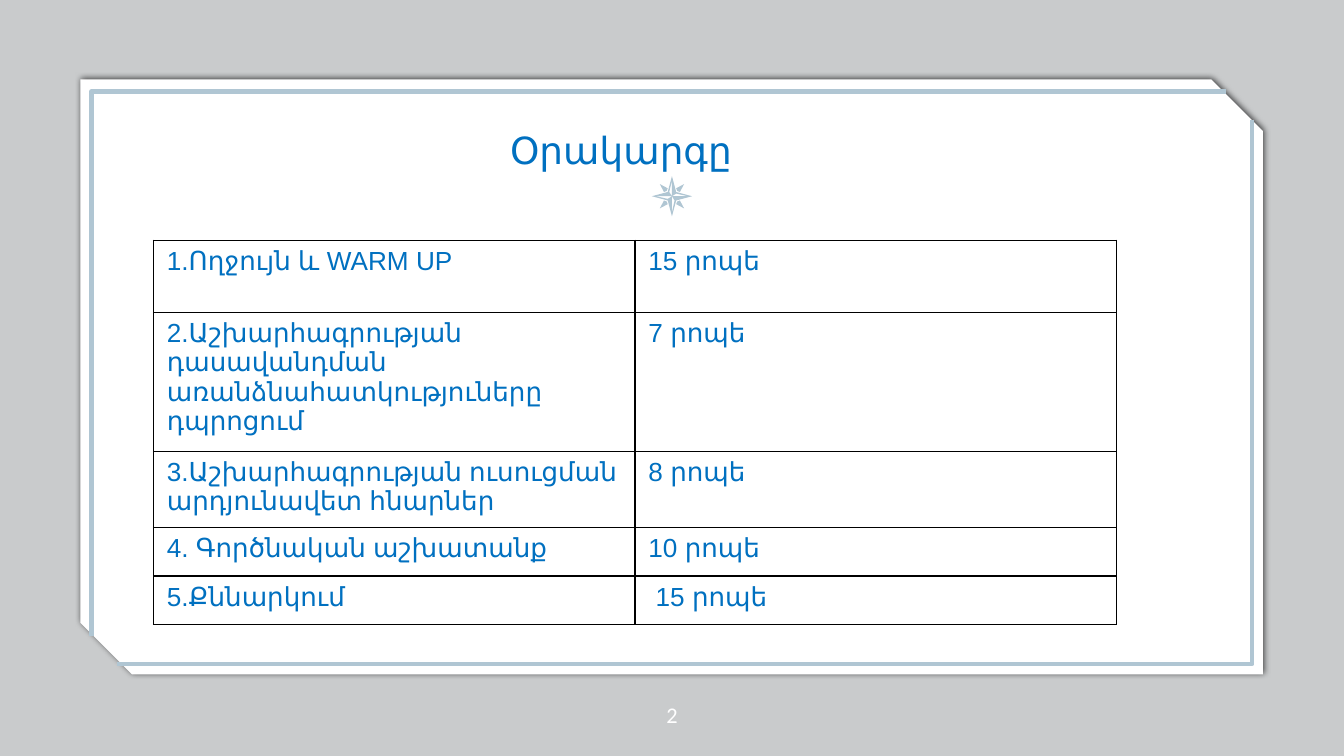
from lxml import etree
from pptx import Presentation
from pptx import util as u
from pptx.dml.color import RGBColor
from pptx.enum import shapes, text
from pptx.oxml import parse_xml
from pptx.oxml.ns import nsdecls, qn

AGENDA = [
    ("1.Ողջույն և WARM UP", "15 րոպե", 1.36),
    ("2.Աշխարհագրության դասավանդման առանձնահատկություները դպրոցում", "7 րոպե", 2.48),
    ("3.Աշխարհագրության ուսուցման արդյունավետ հնարներ", "8 րոպե", 1.36),
    ("4. Գործնական աշխատանք", "10 րոպե", 0.92),
    ("5.Քննարկում", " 15 րոպե", 0.92),
]


def color(value):
    return RGBColor.from_string(value)


def quarter_turns(points):
    for _ in range(4):
        yield points
        points = [(-y, x) for x, y in points]


class Deck:
    ACCENT = "B0C6D3"
    INK = "0070C0"
    WHITE = "FFFFFF"
    BLACK = "000000"

    def __init__(self, width, height):
        self.prs = Presentation()
        self.prs.slide_width, self.prs.slide_height = u.Cm(width), u.Cm(height)
        self.s = self.prs.slides.add_slide(self.prs.slide_layouts[6])

    def shape(self, kind, box, fill):
        sp = self.s.shapes.add_shape(kind, *map(u.Cm, box))
        sp.shadow.inherit = False
        sp.fill.solid()
        sp.fill.fore_color.rgb = color(fill)
        sp.line.fill.background()
        return sp

    def transparency(self, sp, opacity):
        clr = sp._element.spPr.find(qn("a:solidFill"))[0]
        etree.SubElement(clr, qn("a:alpha"), val=str(opacity * 1000))

    def drop_shadow(self, sp, blur, distance, opacity):
        effects = sp._element.spPr.find(qn("a:effectLst"))
        effects.append(parse_xml(
            f'<a:outerShdw {nsdecls("a")} blurRad="{u.Pt(blur)}" dist="{u.Pt(distance)}" '
            f'dir="0" algn="ctr" rotWithShape="0"><a:srgbClr val="{self.BLACK}">'
            f'<a:alpha val="{opacity * 1000}"/></a:srgbClr></a:outerShdw>'))

    def outline(self, contours, origin=(0, 0), closed=True):
        contours = [[(u.Cm(origin[0] + x), u.Cm(origin[1] + y)) for x, y in c]
                    for c in contours]
        builder = self.s.shapes.build_freeform(*contours[0][0])
        for i, points in enumerate(contours):
            if i:
                builder.move_to(*points[0])
            builder.add_line_segments(points[1:], close=closed)
        sp = builder.convert_to_shape()
        sp.shadow.inherit = False
        if closed:
            sp.fill.solid()
            sp.fill.fore_color.rgb = color(self.ACCENT)
            sp.line.fill.background()
        else:
            sp.fill.background()
            sp.line.color.rgb = color(self.ACCENT)
            sp.line.width = u.Pt(2.25)

    def compass(self, x, y):
        for kite in quarter_turns([(-.23, -.23), (-.15, -.08), (-.1, -.1), (-.08, -.15)]):
            self.outline([kite], (x, y))
        rays = quarter_turns([(0, -.38), (.08, -.08)])
        star = [point for ray in rays for point in ray]
        cuts = quarter_turns([(0, -.3), (0, 0), (-.05, -.08)])
        self.outline([star, *cuts], (x, y))

    def style_text(self, p, words, size, font, ink):
        p.text = words
        p.font.size = u.Pt(size)
        p.font.name = font
        p.font.color.rgb = color(ink)

    def label(self, box, words, size, ink, anchor, align, indent=0):
        tf = self.s.shapes.add_textbox(*map(u.Cm, box)).text_frame
        tf.word_wrap = True
        tf.margin_left = tf.margin_right = tf.margin_top = tf.margin_bottom = 0
        tf.vertical_anchor = anchor
        p = tf.paragraphs[0]
        p.alignment = align
        p._p.get_or_add_pPr().set("marL", str(u.Cm(indent)))
        self.style_text(p, words, size, "Calibri", ink)

    def cell(self, cell, words):
        self.style_text(cell.text_frame.paragraphs[0], words, 14, "Arial", self.INK)
        tcPr = cell._tc.get_or_add_tcPr()
        for side in "LRTB":
            tcPr.append(parse_xml(
                f'<a:ln{side} {nsdecls("a")} w="{u.Pt(0.75)}"><a:solidFill>'
                f'<a:srgbClr val="{self.BLACK}"/></a:solidFill></a:ln{side}>'))
        cell.fill.background()

    def table(self, left, top, col_width, rows):
        height = sum(row[-1] for row in rows)
        table = self.s.shapes.add_table(
            len(rows), 2, u.Cm(left), u.Cm(top), u.Cm(2 * col_width), u.Cm(height)).table
        table.first_row = table.horz_banding = False
        for r, (*words, row_height) in enumerate(rows):
            table.rows[r].height = u.Cm(row_height)
            for c, entry in enumerate(words):
                self.cell(table.cell(r, c), entry)


def main():
    deck = Deck(25.4, 14.29)
    kinds = shapes.MSO_SHAPE
    backdrop = deck.shape(kinds.RECTANGLE, (0, 0, 25.4, 14.29), "040E11")
    deck.transparency(backdrop, 21)
    card = deck.shape(kinds.SNIP_2_DIAG_RECTANGLE, (1.52, 1.5, 22.35, 11.25), deck.WHITE)
    card.adjustments[0], card.adjustments[1] = 0, 0.087
    deck.drop_shadow(card, 3.4, 0.8, 68)
    deck.outline([[(1.73, 12.02), (1.73, 1.73), (23.18, 1.73)]], closed=False)
    deck.outline([[(23.67, 2.26), (23.67, 12.55), (2.21, 12.55)]], closed=False)
    deck.compass(12.7, 3.71)
    deck.label((2.79, 1.73, 19.84, 1.52), "Օրակարգը", 20, deck.INK,
               text.MSO_ANCHOR.BOTTOM, text.PP_ALIGN.LEFT, indent=6.85)
    deck.label((11.94, 12.75, 1.52, 1.52), "2", 12, deck.WHITE,
               text.MSO_ANCHOR.MIDDLE, text.PP_ALIGN.CENTER)
    deck.table(2.9, 4.54, 9.1, AGENDA)
    deck.prs.save("out.pptx")


if __name__ == "__main__":
    main()
